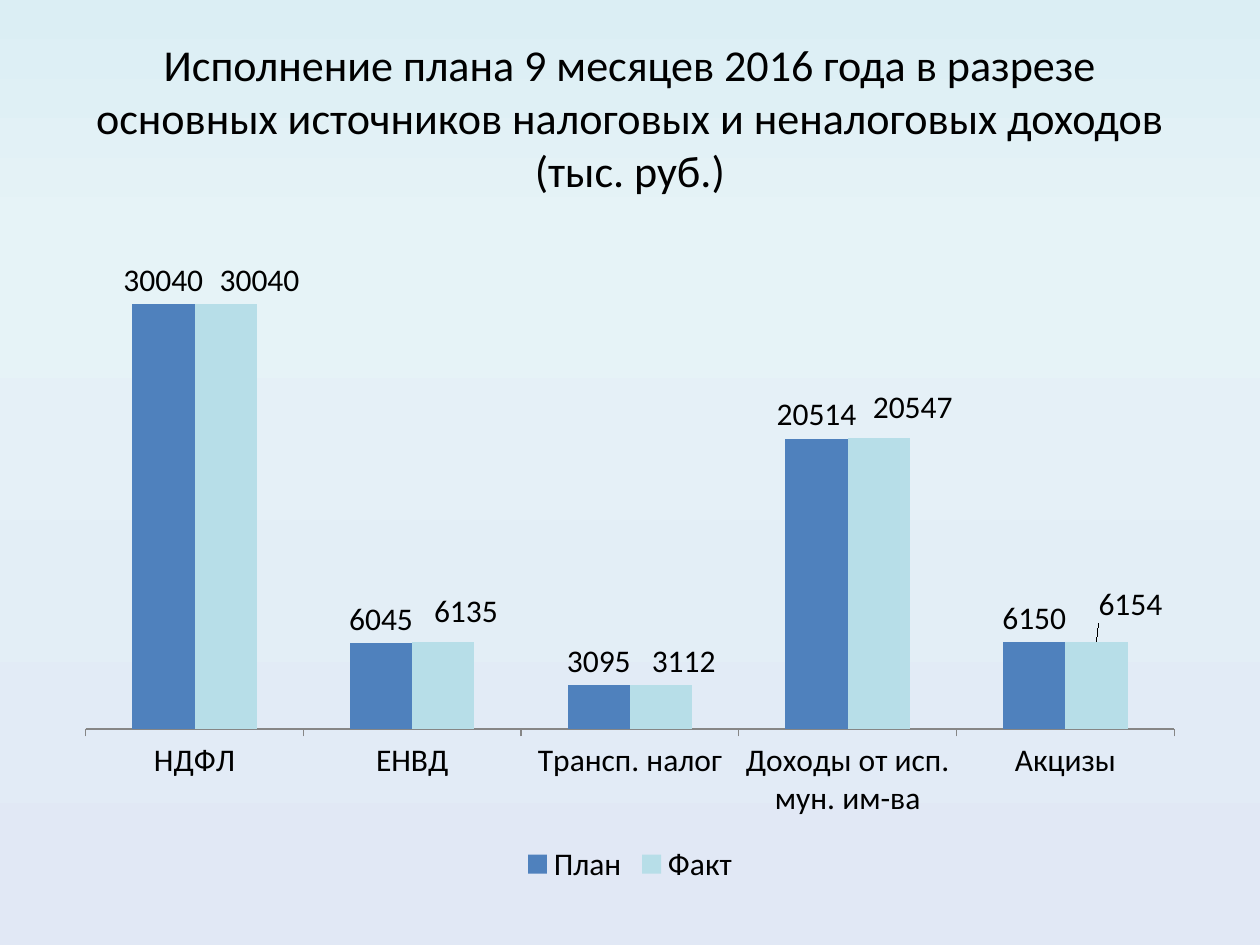
import copy
from dataclasses import dataclass

import lxml.etree
import pptx
import pptx.chart.data
import pptx.dml.color
import pptx.enum.chart
import pptx.enum.text
import pptx.oxml
import pptx.oxml.ns
import pptx.util

RGBColor = pptx.dml.color.RGBColor
EMU_PER_PX = 9144
FONT = "Calibri"
BLACK = RGBColor(0x00, 0x00, 0x00)
AXIS_GRAY = RGBColor(0x86, 0x86, 0x86)
PLAN_BLUE = RGBColor(0x4F, 0x81, 0xBD)
FACT_CYAN = RGBColor(0xB7, 0xDE, 0xE8)
SKY_TOP = RGBColor(0xDB, 0xEE, 0xF4)
SKY_MIDDLE = RGBColor(0xE6, 0xF3, 0xF7)
SKY_BOTTOM = RGBColor(0xE1, 0xE8, 0xF5)


@dataclass(frozen=True)
class Box:
    left: int
    top: int
    width: int
    height: int

    def emu(self) -> tuple:
        return tuple(px(n) for n in (self.left, self.top, self.width, self.height))


@dataclass(frozen=True)
class Series:
    name: str
    values: tuple
    color: RGBColor
    label_offsets: tuple = ()


CATEGORIES = ("НДФЛ", "ЕНВД", "Трансп. налог", "Доходы от исп. мун. им-ва", "Акцизы")
SERIES = (
    Series("План", (30040, 6045, 3095, 20514, 6150), PLAN_BLUE),
    Series(
        "Факт", (30040, 6135, 3112, 20547, 6154), FACT_CYAN,
        ((0.03, 0), (0.02, -0.01), (0.02, 0), (0.03, -0.01), (0.03, -0.02)),
    ),
)


def px(length: int) -> int:
    return length * EMU_PER_PX


def paint_background(slide) -> None:
    fill = slide.background.fill
    fill.gradient()
    fill.gradient_angle = 270
    first = fill.gradient_stops[0]
    stop_list = slide.background._cSld.find(".//" + pptx.oxml.ns.qn("a:gsLst"))
    stop_list.insert(1, copy.deepcopy(stop_list[0]))
    colors = (SKY_TOP, SKY_MIDDLE, SKY_BOTTOM)
    for stop, color, position in zip(fill.gradient_stops, colors, (0, 0.25, 1)):
        stop.color.rgb = color
        stop.position = position


def add_text(slide, box: Box, text: str, *, size: float, color: RGBColor) -> None:
    shape = slide.shapes.add_textbox(*box.emu())
    frame = shape.text_frame
    frame.word_wrap = True
    frame.vertical_anchor = pptx.enum.text.MSO_ANCHOR.MIDDLE
    paragraph = frame.paragraphs[0]
    paragraph.alignment = pptx.enum.text.PP_ALIGN.CENTER
    run = paragraph.add_run()
    run.text = text
    run.font.size = pptx.util.Pt(size)
    run.font.name = FONT
    run.font.color.rgb = color


def manual_layout(**settings):
    layout = pptx.oxml.parse_xml(f"<c:layout {pptx.oxml.ns.nsdecls('c')}/>")
    manual = lxml.etree.SubElement(layout, pptx.oxml.ns.qn("c:manualLayout"))
    for name, value in settings.items():
        lxml.etree.SubElement(manual, pptx.oxml.ns.qn(f"c:{name}")).set("val", str(value))
    return layout


def set_plot_area(chart) -> None:
    plot_area = chart._chartSpace.chart.plotArea
    for old_layout in plot_area.findall(pptx.oxml.ns.qn("c:layout")):
        plot_area.remove(old_layout)
    plot_area.insert(0, manual_layout(
        layoutTarget="inner", xMode="edge", yMode="edge", x=0.02, y=0.02, w=0.96, h=0.74))


def format_series(chart_series, series: Series) -> None:
    outside = pptx.enum.chart.XL_LABEL_POSITION.OUTSIDE_END
    chart_series.format.fill.solid()
    chart_series.format.fill.fore_color.rgb = series.color
    chart_series.invert_if_negative = False
    labels = chart_series.data_labels
    labels.show_value = True
    labels.position = outside
    for index, (x, y) in enumerate(series.label_offsets):
        chart_series.points[index].data_label.position = outside
    label_elements = labels._element.findall(pptx.oxml.ns.qn("c:dLbl"))
    for element, (x, y) in zip(label_elements, series.label_offsets):
        element.insert(1, manual_layout(x=x, y=y))


def add_column_chart(slide, box: Box) -> None:
    data = pptx.chart.data.CategoryChartData()
    data.categories = CATEGORIES
    for series in SERIES:
        data.add_series(series.name, series.values)
    chart = slide.shapes.add_chart(
        pptx.enum.chart.XL_CHART_TYPE.COLUMN_CLUSTERED, *box.emu(), data).chart
    chart.has_title = False
    chart.font.name = FONT
    chart.font.size = pptx.util.Pt(18)
    chart.font.color.rgb = BLACK
    chart.has_legend = True
    chart.legend.position = pptx.enum.chart.XL_LEGEND_POSITION.BOTTOM
    chart.legend.include_in_layout = False
    chart.value_axis.visible = False
    chart.value_axis.has_major_gridlines = False
    chart.value_axis.minimum_scale = 0
    chart.value_axis.maximum_scale = 35000
    chart.category_axis.major_tick_mark = pptx.enum.chart.XL_TICK_MARK.OUTSIDE
    chart.category_axis.format.line.color.rgb = AXIS_GRAY
    plot = chart.plots[0]
    plot.gap_width = 150
    plot.overlap = 0
    plot.vary_by_categories = False
    for chart_series, series in zip(plot.series, SERIES):
        format_series(chart_series, series)
    set_plot_area(chart)


def main() -> None:
    presentation = pptx.Presentation()
    presentation.slide_width = px(1000)
    presentation.slide_height = px(750)
    slide = presentation.slides.add_slide(presentation.slide_layouts[6])
    paint_background(slide)
    add_text(
        slide, Box(50, 30, 900, 125),
        "Исполнение плана 9 месяцев 2016 года в разрезе основных источников "
        "налоговых и неналоговых доходов (тыс. руб.)",
        size=25.2, color=BLACK,
    )
    add_column_chart(slide, Box(50, 175, 900, 531))
    presentation.save("out.pptx")


if __name__ == "__main__":
    main()
